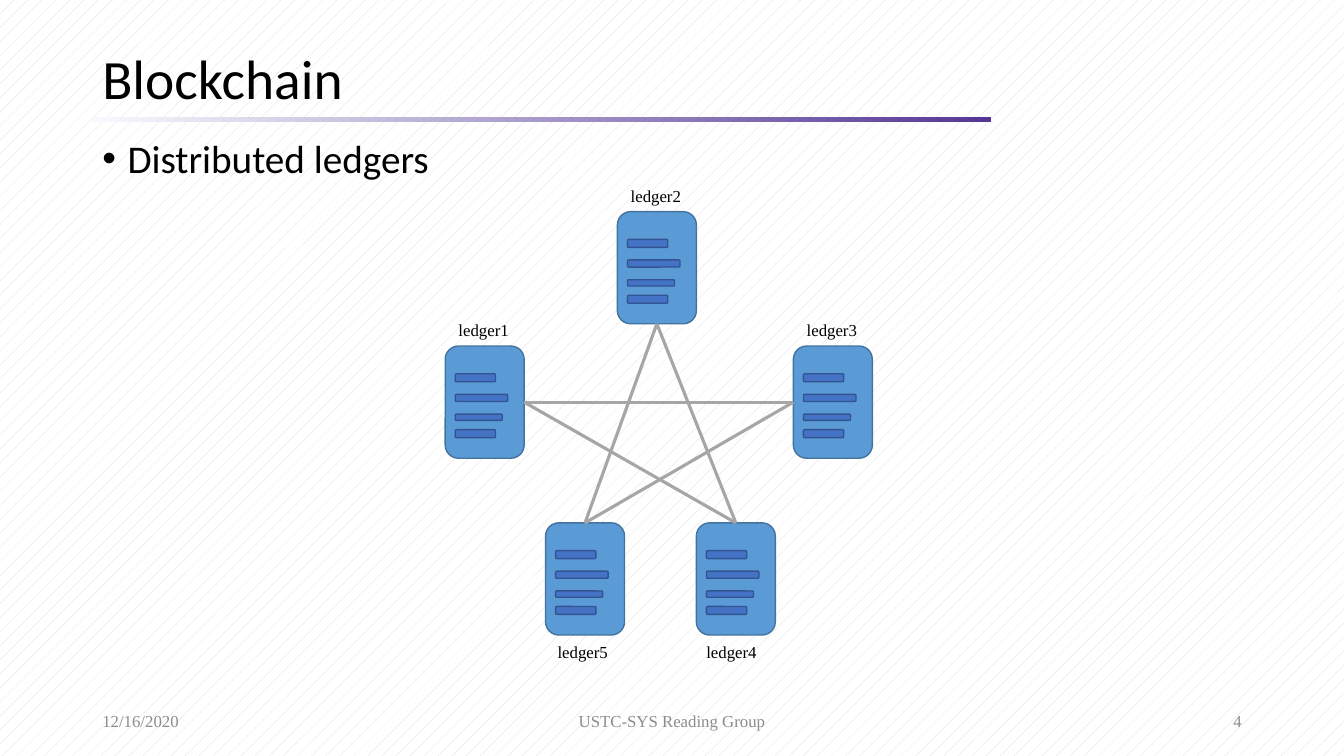
from lxml.etree import SubElement
from pptx import Presentation
from pptx.dml.color import RGBColor
from pptx.enum.dml import MSO_PATTERN
from pptx.enum.shapes import MSO_CONNECTOR, MSO_SHAPE
from pptx.enum.text import MSO_ANCHOR, MSO_AUTO_SIZE, PP_ALIGN
from pptx.oxml.ns import qn
from pptx.util import Inches, Pt

BLACK = RGBColor(0x00, 0x00, 0x00)
WHITE = RGBColor(0xFF, 0xFF, 0xFF)
PATTERN_GRAY = RGBColor(0xD9, 0xD9, 0xD9)
FOOTER_GRAY = RGBColor(0x8C, 0x8C, 0x8C)
LINK_GRAY = RGBColor(0xA6, 0xA6, 0xA6)
RULE_LIGHT = RGBColor(0xF7, 0xFA, 0xFD)
RULE_PURPLE = RGBColor(0x54, 0x37, 0x95)
LEDGER_FILL = RGBColor(0x5B, 0x9B, 0xD5)
LEDGER_LINE = RGBColor(0x43, 0x73, 0x9E)
ENTRY_FILL = RGBColor(0x44, 0x72, 0xC4)
ENTRY_LINE = RGBColor(0x32, 0x54, 0x91)
SANS, SERIF = "Calibri", "Times New Roman"
TOP, LEFT, BOTTOM, RIGHT = range(4)

presentation = Presentation()
presentation.slide_width = Inches(13.33)
presentation.slide_height = Inches(7.5)
slide = presentation.slides.add_slide(presentation.slide_layouts[6])
shapes = slide.shapes

# The slide is a grid of 160 columns and 90 rows
COLUMN = presentation.slide_width / 160
ROW = presentation.slide_height / 90


def add_text(text, column, row, columns, rows, font_name, size, color,
             anchor=MSO_ANCHOR.TOP, align=PP_ALIGN.LEFT):
    """Add a one-paragraph text box placed on the grid; return its shape."""
    box = shapes.add_textbox(round(column * COLUMN), round(row * ROW),
                             round(columns * COLUMN), round(rows * ROW))
    box.text_frame.word_wrap = True
    box.text_frame.vertical_anchor = anchor
    paragraph = box.text_frame.paragraphs[0]
    paragraph.text = text
    paragraph.alignment = align
    paragraph.font.name = font_name
    paragraph.font.size = Pt(size)
    paragraph.font.color.rgb = color
    return box


def add_block(kind, column, row, columns, rows, fill, line):
    """Add an outlined shape placed on the grid; a None colour is left unset."""
    block = shapes.add_shape(kind, round(column * COLUMN), round(row * ROW),
                             round(columns * COLUMN), round(rows * ROW))
    block.shadow.inherit = False
    if fill is not None:
        block.fill.solid()
        block.fill.fore_color.rgb = fill
    if line is None:
        block.line.fill.background()
    else:
        block.line.color.rgb = line
        block.line.width = Pt(1)
    return block


# Background
background = slide.background.fill
background.patterned()
background.pattern = MSO_PATTERN.PERCENT_5
background.fore_color.rgb = PATTERN_GRAY
background.back_color.rgb = WHITE

# Title, rule and bullet
rule = add_block(MSO_SHAPE.RECTANGLE, 11, 13.9, 107, 0.65, None, None)
rule.fill.gradient()
rule.fill.gradient_angle = 0
for stop, color in zip(rule.fill.gradient_stops, (RULE_LIGHT, RULE_PURPLE)):
    stop.color.rgb = color

title = add_text("Blockchain", 11, 5.2, 138, 9, SANS, 39.6, BLACK, MSO_ANCHOR.MIDDLE)
title.text_frame.paragraphs[0].line_spacing = 0.9

body = add_text("", 11, 16, 138, 6.5, SANS, 28, BLACK)
bullet = body.text_frame.paragraphs[0]
bullet.text = "Distributed ledgers"
bullet.line_spacing = 0.9
properties = bullet._p.get_or_add_pPr()
properties.set("marL", str(Inches(0.25)))
properties.set("indent", str(-Inches(0.25)))
bullet_font = properties.find(qn("a:defRPr"))
for tag, attribute, value in (("a:buFont", "typeface", "Arial"), ("a:buChar", "char", "•")):
    element = SubElement(properties, qn(tag))
    element.set(attribute, value)
    bullet_font.addprevious(element)

# Footer
for text, column, columns, align in (
    ("12/16/2020", 11, 36, PP_ALIGN.LEFT),
    ("USTC-SYS Reading Group", 53, 54, PP_ALIGN.CENTER),
    ("4", 113, 36, PP_ALIGN.RIGHT),
):
    add_text(text, column, 83.4, columns, 4.8, SERIF, 12, FOOTER_GRAY,
             MSO_ANCHOR.MIDDLE, align)

# Ledgers: name, column, row, label offset in columns and rows
LABEL_ABOVE, LABEL_BELOW = -3.7, 13.55
ledgers = {}
for name, column, row, label_column, label_row in (
    ("ledger1", 53, 41.2, 0.4, LABEL_ABOVE),
    ("ledger2", 73.5, 25.2, 0.4, LABEL_ABOVE),
    ("ledger3", 94.45, 41.2, 0.4, LABEL_ABOVE),
    ("ledger5", 64.95, 62.25, 0.25, LABEL_BELOW),
    ("ledger4", 82.9, 62.25, 0, LABEL_BELOW),
):
    ledgers[name] = add_block(MSO_SHAPE.ROUNDED_RECTANGLE, column, row, 9.4, 13.35,
                              LEDGER_FILL, LEDGER_LINE)
    for entry_row, columns, rows in ((3.3, 4.8, 0.95), (5.75, 6.25, 0.85),
                                     (8.1, 5.6, 0.75), (9.95, 4.8, 0.95)):
        add_block(MSO_SHAPE.ROUNDED_RECTANGLE, column + 1.2, row + entry_row,
                  columns, rows, ENTRY_FILL, ENTRY_LINE)
    label = add_text(name, column + label_column, row + label_row, 8.5, 3.6,
                     SERIF, 12, BLACK)
    label.text_frame.word_wrap = False
    label.text_frame.auto_size = MSO_AUTO_SIZE.SHAPE_TO_FIT_TEXT

# Links between the ledgers
for start, start_side, end, end_side in (
    ("ledger2", BOTTOM, "ledger5", TOP),
    ("ledger5", TOP, "ledger3", LEFT),
    ("ledger3", LEFT, "ledger1", RIGHT),
    ("ledger1", RIGHT, "ledger4", TOP),
    ("ledger2", BOTTOM, "ledger4", TOP),
):
    link = shapes.add_connector(MSO_CONNECTOR.STRAIGHT, 0, 0, 0, 0)
    link.begin_connect(ledgers[start], start_side)
    link.end_connect(ledgers[end], end_side)
    link.line.color.rgb = LINK_GRAY
    link.line.width = Pt(2.25)
    SubElement(link._element.spPr, qn("a:effectLst"))

presentation.save("out.pptx")
